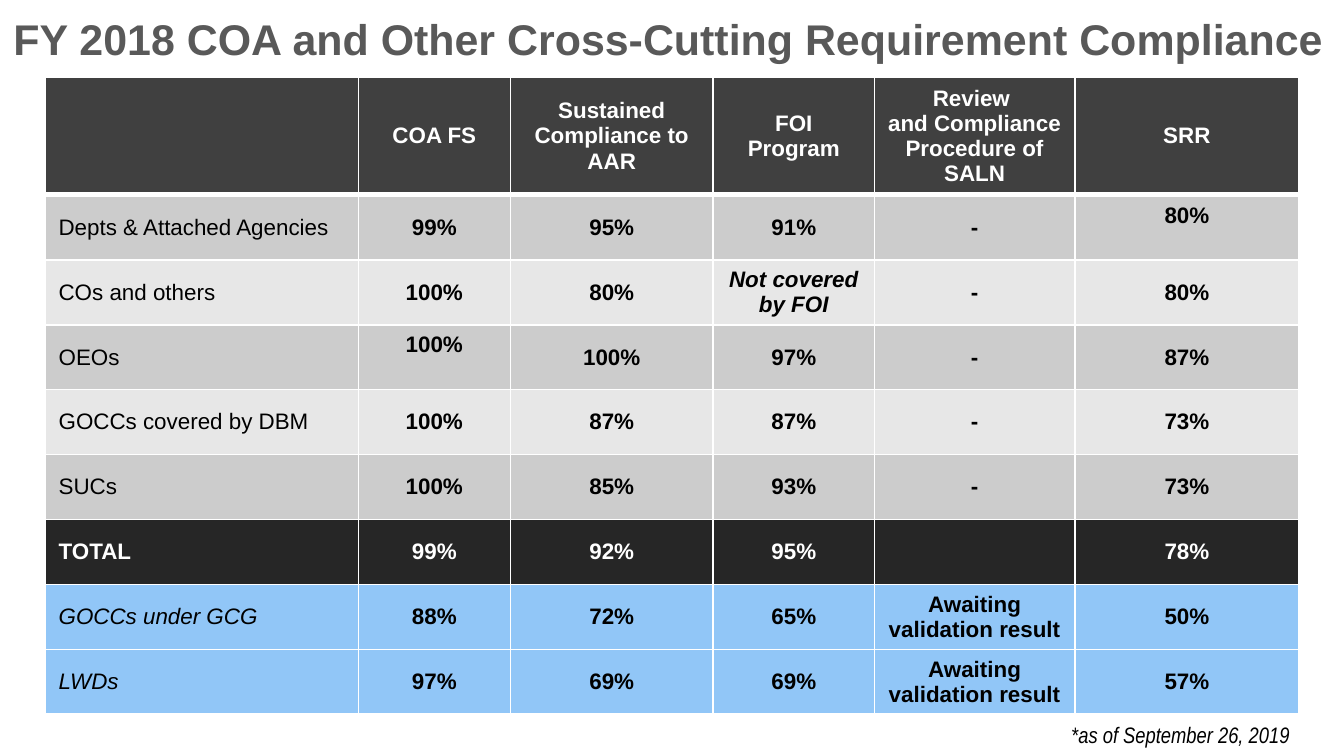
import dataclasses

import pptx
import pptx.dml.color
import pptx.enum.text
import pptx.oxml
import pptx.oxml.ns
import pptx.util

Pt = pptx.util.Pt
RGB = pptx.dml.color.RGBColor.from_string
ALIGN = pptx.enum.text.PP_ALIGN
ANCHOR = pptx.enum.text.MSO_ANCHOR
AUTOSIZE = pptx.enum.text.MSO_AUTO_SIZE


@dataclasses.dataclass(frozen=True)
class Theme:
    font: str = "Arial"
    note_font: str = "Arial Narrow"
    title_size: float = 23
    body_size: float = 12
    title: str = "595959"
    dark_text: str = "000000"
    light_text: str = "FFFFFF"
    border: str = "FFFFFF"
    header: str = "404040"
    band_dark: str = "CCCCCC"
    band_light: str = "E7E7E7"
    total: str = "262626"
    separate: str = "91C6F7"


THEME = Theme()

HEADINGS = ["", "COA FS", "Sustained Compliance to AAR", "FOI Program",
            "Review \nand Compliance Procedure of SALN", "SRR"]
AGENCIES = [
    ["Depts & Attached Agencies", "99%", "95%", "91%", "-", "80%"],
    ["COs and others", "100%", "80%", "Not covered by FOI", "-", "80%"],
    ["OEOs", "100%", "100%", "97%", "-", "87%"],
    ["GOCCs covered by DBM", "100%", "87%", "87%", "-", "73%"],
    ["SUCs", "100%", "85%", "93%", "-", "73%"],
]
TOTAL = ["TOTAL", "99%", "92%", "95%", "", "78%"]
SEPARATE = [
    ["GOCCs under GCG", "88%", "72%", "65%", "Awaiting validation result", "50%"],
    ["LWDs", "97%", "69%", "69%", "Awaiting validation result", "57%"],
]
COLUMN_WIDTHS = [167.8, 81.4, 108.7, 86.4, 107.3, 120.2]
HEADER_HEIGHT = 63
RAISED_CELLS = {(1, 5), (3, 1)}  # values set above the middle of their cell


def style_text(tf, size, color, font=THEME.font, bold=False, italic=False,
               align=ALIGN.LEFT):
    for p in tf.paragraphs:
        p.alignment = align
        p.font.name, p.font.size = font, Pt(size)
        p.font.bold, p.font.italic = bold, italic
        p.font.color.rgb = RGB(color)


def set_borders(cell, top=1, bottom=1):
    props = cell._tc.get_or_add_tcPr()
    widths = {"lnL": 1, "lnR": 1, "lnT": top, "lnB": bottom}
    for i, (tag, width) in enumerate(widths.items()):
        props.insert(i, pptx.oxml.parse_xml(
            f'<a:{tag} {pptx.oxml.ns.nsdecls("a")} w="{Pt(width)}"><a:solidFill>'
            f'<a:srgbClr val="{THEME.border}"/></a:solidFill></a:{tag}>'))


def add_title(slide, text, left, top, width, height):
    sp = slide.shapes.title
    sp.left, sp.top, sp.width, sp.height = map(Pt, (left, top, width, height))
    tf = sp.text_frame
    tf.text = text
    tf.auto_size, tf.vertical_anchor = AUTOSIZE.NONE, ANCHOR.MIDDLE
    style_text(tf, THEME.title_size, THEME.title, bold=True)


def add_compliance_table(slide, left, top, width, height):
    bands = [THEME.band_dark, THEME.band_light]
    # Each row: values, fill, text colour
    rows = [(HEADINGS, THEME.header, THEME.light_text)]
    rows += [(values, bands[i % 2], THEME.dark_text)
             for i, values in enumerate(AGENCIES)]
    rows.append((TOTAL, THEME.total, THEME.light_text))
    rows += [(values, THEME.separate, THEME.dark_text) for values in SEPARATE]

    table = slide.shapes.add_table(len(rows), len(HEADINGS), Pt(left), Pt(top),
                                   Pt(width), Pt(height)).table
    table.horz_banding = False
    for column, share in zip(table.columns, COLUMN_WIDTHS):
        column.width = Pt(width * share / sum(COLUMN_WIDTHS))
    for r, row in enumerate(table.rows):
        row.height = Pt(HEADER_HEIGHT if r == 0
                        else (height - HEADER_HEIGHT) / (len(rows) - 1))

    for r, (values, fill, color) in enumerate(rows):
        for c, value in enumerate(values):
            cell = table.cell(r, c)
            cell.fill.solid()
            cell.fill.fore_color.rgb = RGB(fill)
            set_borders(cell, top=3 if r == 1 else 1, bottom=3 if r == 0 else 1)
            cell.vertical_anchor = ANCHOR.MIDDLE
            if (r, c) in RAISED_CELLS:
                cell.margin_bottom = Pt(16.5)
            cell.text_frame.text = value
            is_label = c == 0
            italic = (is_label and values in SEPARATE) or value.startswith("Not")
            style_text(cell.text_frame, THEME.body_size, color,
                       bold=not is_label or values is TOTAL, italic=italic,
                       align=ALIGN.LEFT if is_label else ALIGN.CENTER)


def add_date_note(slide, text, left, top, width, height):
    sp = slide.shapes.add_textbox(*map(Pt, (left, top, width, height)))
    tf = sp.text_frame
    tf.word_wrap = True
    tf.auto_size = AUTOSIZE.SHAPE_TO_FIT_TEXT
    tf.text = text
    style_text(tf, THEME.body_size, THEME.dark_text, THEME.note_font,
               italic=True, align=ALIGN.RIGHT)


def main():
    prs = pptx.Presentation()
    prs.slide_width, prs.slide_height = Pt(720), Pt(405)
    slide = prs.slides.add_slide(prs.slide_layouts[5])
    add_compliance_table(slide, 24.2, 41.4, 671.8, 341.4)
    add_title(slide, "FY 2018 COA and Other Cross-Cutting Requirement Compliance",
              0, -13.5, 720, 68)
    add_date_note(slide, "*as of September 26, 2019", 386, 383, 312, 21.6)
    prs.save("out.pptx")


if __name__ == "__main__":
    main()
